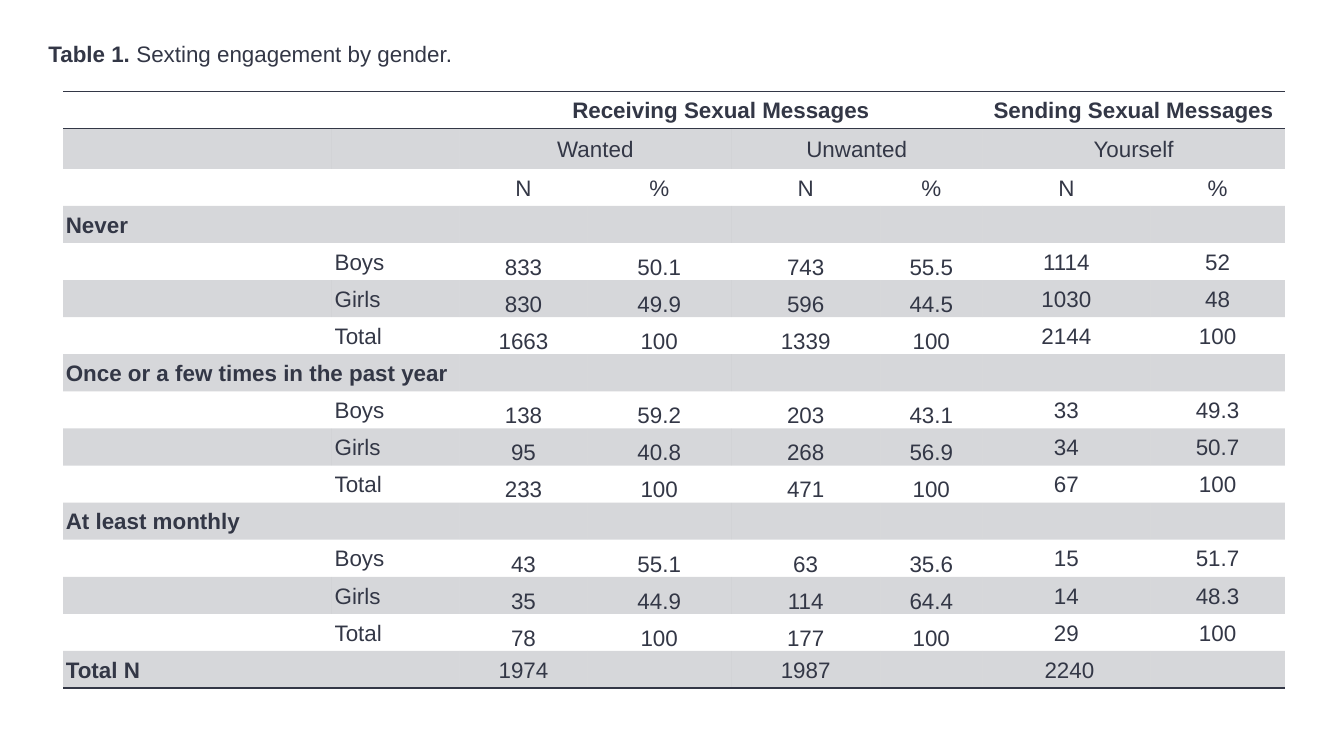
from dataclasses import dataclass

from lxml import etree
from pptx import Presentation
from pptx.dml.color import RGBColor
from pptx.enum import text
from pptx.oxml import ns
from pptx.util import Inches, Pt


@dataclass(frozen=True)
class Theme:
    ink: str = "333746"
    font: str = "Arial"
    size: int = 12
    rule: int = 1
    band_alpha: int = 20000


theme = Theme()


def style_font(font, bold=None):
    font.name = theme.font
    font.size = Pt(theme.size)
    font.color.rgb = RGBColor.from_string(theme.ink)
    font.bold = bold


def add_rule(cell, side):
    line = etree.Element(ns.qn(f"a:ln{side}"), w=str(Pt(theme.rule)))
    fill = etree.SubElement(line, ns.qn("a:solidFill"))
    etree.SubElement(fill, ns.qn("a:srgbClr"), val=theme.ink)
    cell._tc.get_or_add_tcPr().insert(0, line)


rows = [
    ["", "", "Receiving Sexual Messages", "", "", "", "Sending Sexual Messages", ""],
    ["", "", "Wanted", "", "Unwanted", "", "Yourself", ""],
    ["", ""] + ["N", "%"] * 3,
]
groups = {
    "Never": [
        ["Boys", "833", "50.1", "743", "55.5", "1114", "52"],
        ["Girls", "830", "49.9", "596", "44.5", "1030", "48"],
        ["Total", "1663", "100", "1339", "100", "2144", "100"],
    ],
    "Once or a few times in the past year": [
        ["Boys", "138", "59.2", "203", "43.1", "33", "49.3"],
        ["Girls", "95", "40.8", "268", "56.9", "34", "50.7"],
        ["Total", "233", "100", "471", "100", "67", "100"],
    ],
    "At least monthly": [
        ["Boys", "43", "55.1", "63", "35.6", "15", "51.7"],
        ["Girls", "35", "44.9", "114", "64.4", "14", "48.3"],
        ["Total", "78", "100", "177", "100", "29", "100"],
    ],
}
for frequency, counts in groups.items():
    rows.append([frequency] + [""] * 7)
    rows += [[""] + count for count in counts]
rows.append(["Total N", "", "1974", "", "1987", "", " 2240", ""])
last = len(rows) - 1

presentation = Presentation()
presentation.slide_width = Inches(10)
presentation.slide_height = Inches(10 * 9 / 16)
slide = presentation.slides.add_slide(presentation.slide_layouts[5])

title = slide.shapes.title
title.left, title.top = Inches(0.26), Inches(0.3)
title.width, title.height = Inches(10), Inches(0.5)
frame = title.text_frame
frame.auto_size = text.MSO_AUTO_SIZE.NONE
frame.word_wrap = False
frame.vertical_anchor = text.MSO_ANCHOR.TOP
frame.margin_top = 0
paragraph = frame.paragraphs[0]
paragraph.alignment = text.PP_ALIGN.LEFT
for words, bold in [("Table 1. ", True), ("Sexting engagement by gender.", False)]:
    run = paragraph.add_run()
    run.text = words
    style_font(run.font, bold)

column_widths = [2, 0.95, 0.95, 1.07, 1.11, 0.76, 1.25, 1]
table_height, band_height = 4.44, 0.3
table_shape = slide.shapes.add_table(
    len(rows), len(column_widths), Inches(0.47), Inches(0.68), Inches(sum(column_widths)), Inches(table_height)
)
table = table_shape.table
table.first_row = table.horz_banding = False
style = table._tbl.tblPr.find(ns.qn("a:tableStyleId"))
style.text = "{2D5ABB26-0587-4C30-8999-92F81FD0307C}"

for column, width in zip(table.columns, column_widths):
    column.width = Inches(width)
for index, row in enumerate(table.rows):
    row.height = Inches(band_height if index == 1 else (table_height - band_height) / last)

for r, values in enumerate(rows):
    for c, value in enumerate(values):
        cell = table.cell(r, c)
        cell.margin_left = cell.margin_right = Inches(0.02)
        cell.margin_top = cell.margin_bottom = 0
        raised = 3 < r < last and 2 <= c <= 5
        cell.vertical_anchor = text.MSO_ANCHOR.BOTTOM if raised else text.MSO_ANCHOR.MIDDLE
        if r % 2:
            cell.fill.solid()
            cell.fill.fore_color.rgb = RGBColor.from_string(theme.ink)
            color = cell._tc.tcPr.find(".//" + ns.qn("a:srgbClr"))
            etree.SubElement(color, ns.qn("a:alpha"), val=str(theme.band_alpha))
        else:
            cell.fill.background()
        if r in (0, last):
            add_rule(cell, "B")
        if r == 0:
            add_rule(cell, "T")
        cell.text = value
        paragraph = cell.text_frame.paragraphs[0]
        paragraph.line_spacing = 1.07
        paragraph.alignment = text.PP_ALIGN.CENTER if c > 1 else text.PP_ALIGN.LEFT
        style_font(paragraph.font, r == 0 or c == 0)

spans = [(0, 2, 5), (0, 6, 7)] + [(1, c, c + 1) for c in (2, 4, 6)]
spans += [(r, 0, 1) for r in range(3, len(rows), 4)]
for r, first, final in spans:
    table.cell(r, first).merge(table.cell(r, final))

presentation.save("out.pptx")
